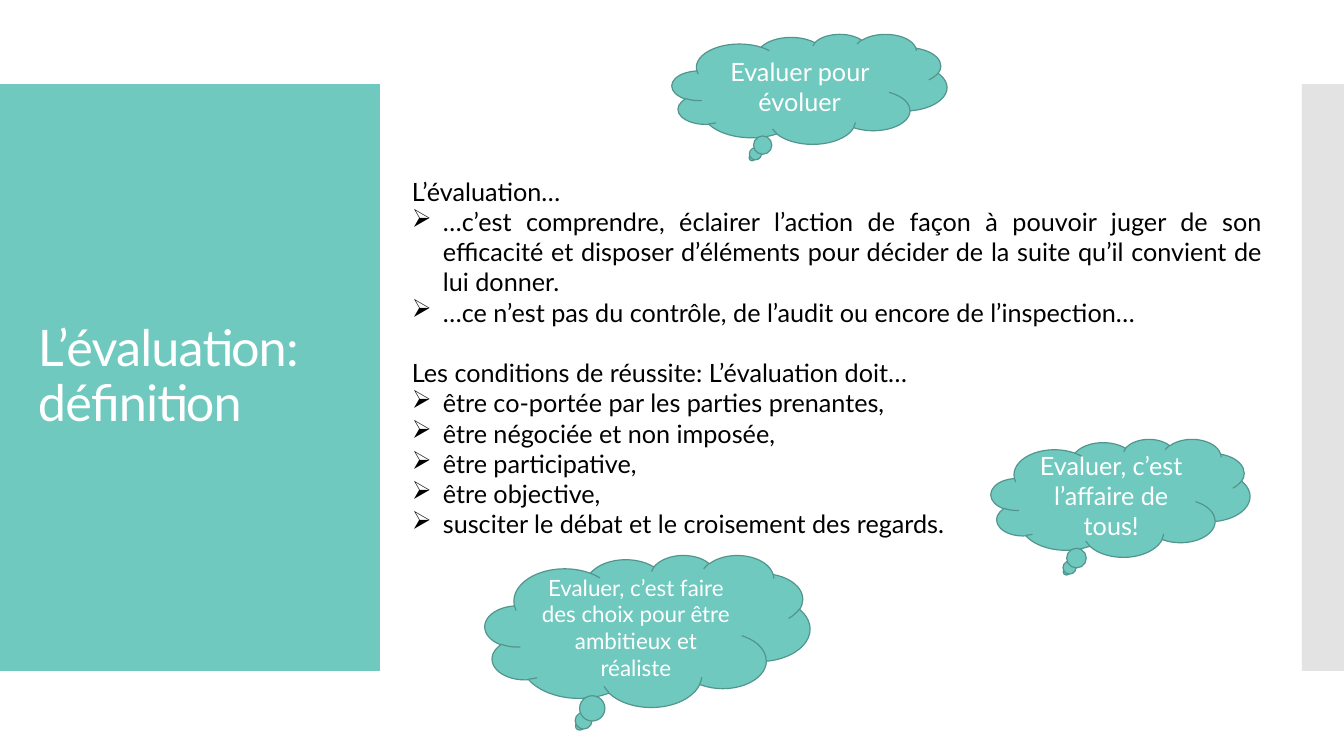
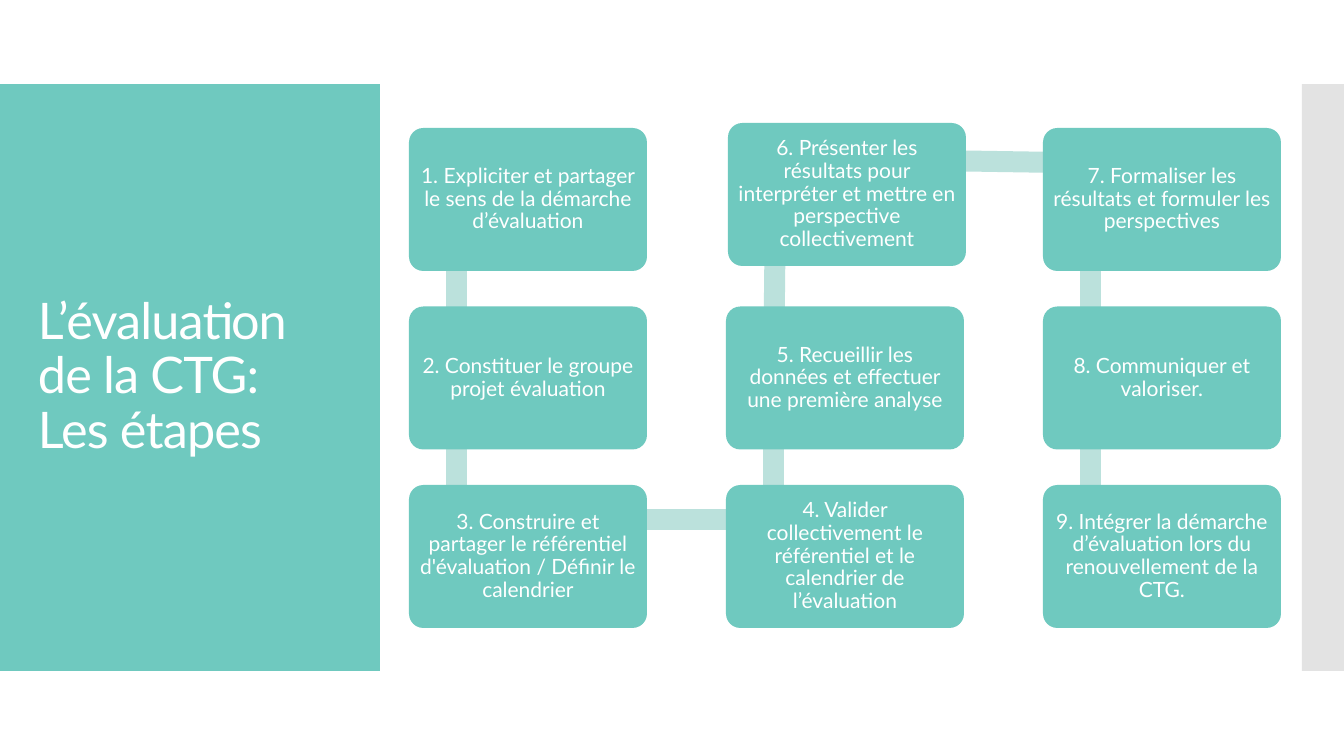
"""Two slides on evaluation: its definition and its nine steps."""
from itertools import pairwise

from lxml.etree import SubElement
from pptx import Presentation
from pptx.dml.color import RGBColor
from pptx.enum.shapes import MSO_CONNECTOR, MSO_SHAPE
from pptx.enum.text import MSO_ANCHOR, PP_ALIGN
from pptx.oxml.ns import qn
from pptx.util import Emu, Pt

FONT = "Lato"
TEAL, TEAL_DARK, TEAL_PALE = "6FC9BF", "52958D", "BBE1DC"
GREY, WHITE, BLACK = "E3E3E3", "FFFFFF", "000000"

DEFINITION_TITLE = "L’évaluation: définition"
DEFINITION = [
    ("L’évaluation…", [
        "…c’est comprendre, éclairer l’action de façon à pouvoir juger de son "
        "efficacité et disposer d’éléments pour décider de la suite qu’il "
        "convient de lui donner.",
        "…ce n’est pas du contrôle, de l’audit ou encore de l’inspection…",
    ]),
    ("Les conditions de réussite: L’évaluation doit…", [
        "être co-portée par les parties prenantes,",
        "être négociée et non imposée,",
        "être participative,",
        "être objective,",
        "susciter le débat et le croisement des regards.",
    ]),
]
CLOUDS = [
    ("Evaluer pour évoluer", 18, (672, 34, 275, 110)),
    ("Evaluer, c’est l’affaire de tous!", 18, (991, 439, 259, 118)),
    ("Evaluer, c’est faire des choix pour être ambitieux et réaliste", 16,
     (485, 555, 325, 152)),
]

STEPS_TITLE = "L’évaluation de la CTG:\vLes étapes"
STEPS = [
    "1. Expliciter et partager le sens de la démarche d’évaluation",
    "2. Constituer le groupe projet évaluation",
    "3. Construire et partager le référentiel d'évaluation / Définir le calendrier",
    "4. Valider collectivement le référentiel et le calendrier de l’évaluation",
    "5. Recueillir les données et effectuer une première analyse",
    "6. Présenter les résultats pour interpréter et mettre en perspective "
    "collectivement",
    "7. Formaliser les résultats et formuler les perspectives",
    "8. Communiquer et valoriser.",
    "9. Intégrer la démarche d’évaluation lors du renouvellement de la CTG.",
]
ROWS = 3
GRID_X, GRID_Y, PITCH_X, PITCH_Y = 409, 128, 317, 178.5
STEP_W, STEP_H = 238, 143
NUDGES = {5: (2, -5)}
ANCHOR_X, ANCHOR_Y, LINK_W = 48, 35, 21
INDENT = 31


def px(n):
    """Turn slide pixels into EMU."""
    return Emu(round(n * 914400 / 100.8))


def rgb(value):
    """Turn a hex string into a colour."""
    return RGBColor.from_string(value)


def add_text(tf, text, size=18, color=WHITE, align=PP_ALIGN.CENTER,
             line_spacing=None, before=0, spacing=None, bullet=None):
    """Append one formatted paragraph to a text frame."""
    p = tf.add_paragraph() if tf.text else tf.paragraphs[0]
    p.text = text
    p.alignment, p.line_spacing, p.space_before = align, line_spacing, Pt(before)
    for r in p.runs:
        r.font.name, r.font.size = FONT, Pt(size)
        r.font.color.rgb = rgb(color)
        if spacing is not None:
            r.font._element.set("spc", str(spacing))
    if bullet:
        pPr = p._p.get_or_add_pPr()
        pPr.set("marL", str(px(INDENT)))
        pPr.set("indent", str(-px(INDENT)))
        SubElement(pPr, qn("a:buChar")).set("char", bullet)


def add_shape(s, kind, box, fill, line=None):
    """Add a flat preset shape with centred, wrapped text."""
    sp = s.shapes.add_shape(kind, *map(px, box))
    sp.shadow.inherit = False
    sp.fill.solid()
    sp.fill.fore_color.rgb = rgb(fill)
    if line:
        sp.line.color.rgb = rgb(line)
        sp.line.width = Pt(0.85)
    else:
        sp.line.fill.background()
    sp.text_frame.word_wrap = True
    sp.text_frame.vertical_anchor = MSO_ANCHOR.MIDDLE
    return sp


def add_textbox(s, box, anchor=MSO_ANCHOR.TOP):
    """Add a wrapping text box and return its text frame."""
    tf = s.shapes.add_textbox(*map(px, box)).text_frame
    tf.word_wrap = True
    tf.vertical_anchor = anchor
    return tf


def add_slide(prs, title):
    """Add a slide with the side bands and its title."""
    s = prs.slides.add_slide(prs.slide_layouts[6])
    add_shape(s, MSO_SHAPE.RECTANGLE, (0, 84, 380, 587), TEAL)
    add_shape(s, MSO_SHAPE.RECTANGLE, (1302, 84, 42, 587), GREY)
    tf = add_textbox(s, (28, 124, 325, 507), MSO_ANCHOR.MIDDLE)
    add_text(tf, title, size=36, align=PP_ALIGN.LEFT, line_spacing=0.9, spacing=-60)
    return s


def add_link(s, start, end):
    """Add a thick straight link between two points."""
    cn = s.shapes.add_connector(MSO_CONNECTOR.STRAIGHT, *map(px, (*start, *end)))
    cn.line.color.rgb = rgb(TEAL_PALE)
    cn.line.width = px(LINK_W)
    SubElement(cn._element.spPr, qn("a:effectLst"))


def step_corner(i):
    """Return the left and top of a step on the snaking grid."""
    col, row = divmod(i, ROWS)
    if col % 2:
        row = ROWS - 1 - row
    dx, dy = NUDGES.get(i, (0, 0))
    return GRID_X + col * PITCH_X + dx, GRID_Y + row * PITCH_Y + dy


def build_definition(prs):
    """Build the definition slide."""
    s = add_slide(prs, DEFINITION_TITLE)
    tf = add_textbox(s, (402, 171, 870, 377))
    style = {"color": BLACK, "align": PP_ALIGN.JUSTIFY}
    for i, (heading, points) in enumerate(DEFINITION):
        add_text(tf, heading, before=21.6 if i else 0, **style)
        for point in points:
            add_text(tf, point, bullet="➢", **style)
    for text, size, box in CLOUDS:
        sp = add_shape(s, MSO_SHAPE.CLOUD_CALLOUT, box, TEAL, TEAL_DARK)
        add_text(sp.text_frame, text, size=size)


def build_steps(prs):
    """Build the slide of linked steps."""
    s = add_slide(prs, STEPS_TITLE)
    corners = [step_corner(i) for i in range(len(STEPS))]
    anchors = [(x + ANCHOR_X, y + ANCHOR_Y) for x, y in corners]
    for start, end in pairwise(anchors):
        add_link(s, start, end)
    for text, corner in zip(STEPS, corners):
        sp = add_shape(s, MSO_SHAPE.ROUNDED_RECTANGLE, (*corner, STEP_W, STEP_H), TEAL)
        sp.adjustments[0] = 0.1
        tf = sp.text_frame
        tf.margin_left = tf.margin_right = tf.margin_top = tf.margin_bottom = px(6)
        add_text(tf, text, size=15, line_spacing=0.9)


def main():
    """Build and save the presentation."""
    prs = Presentation()
    prs.slide_width, prs.slide_height = px(1344), px(756)
    build_definition(prs)
    build_steps(prs)
    prs.save("out.pptx")


if __name__ == "__main__":
    main()
